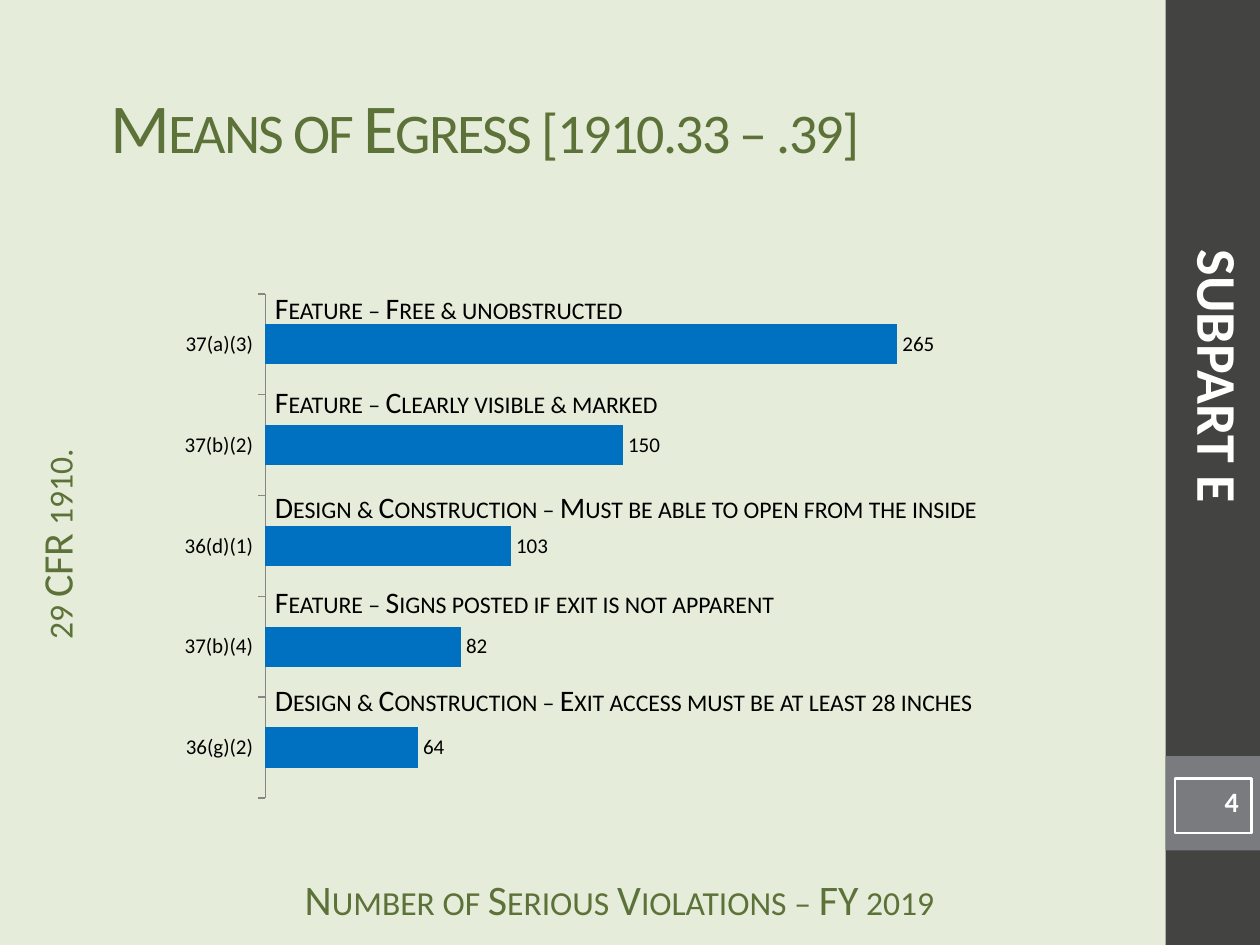
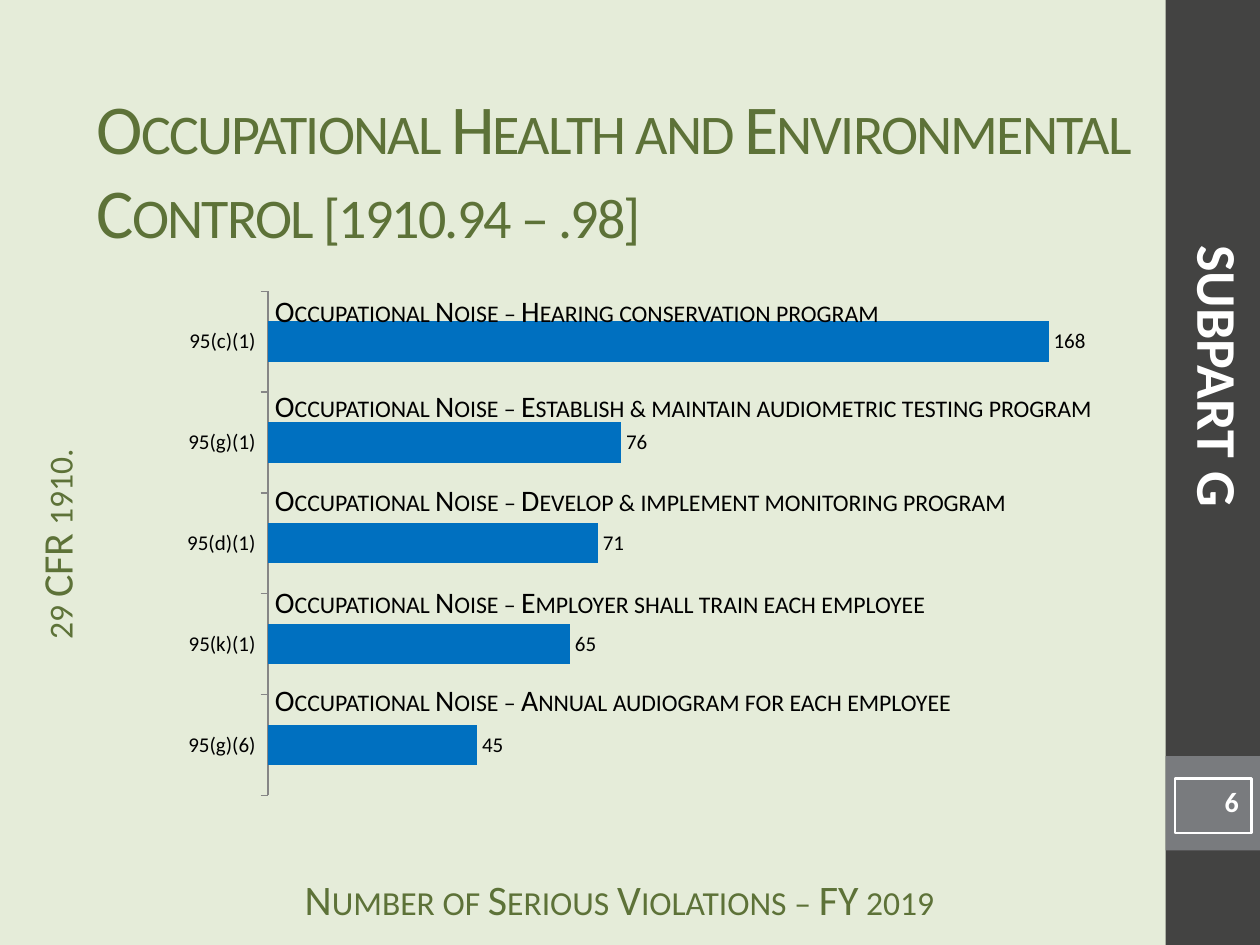
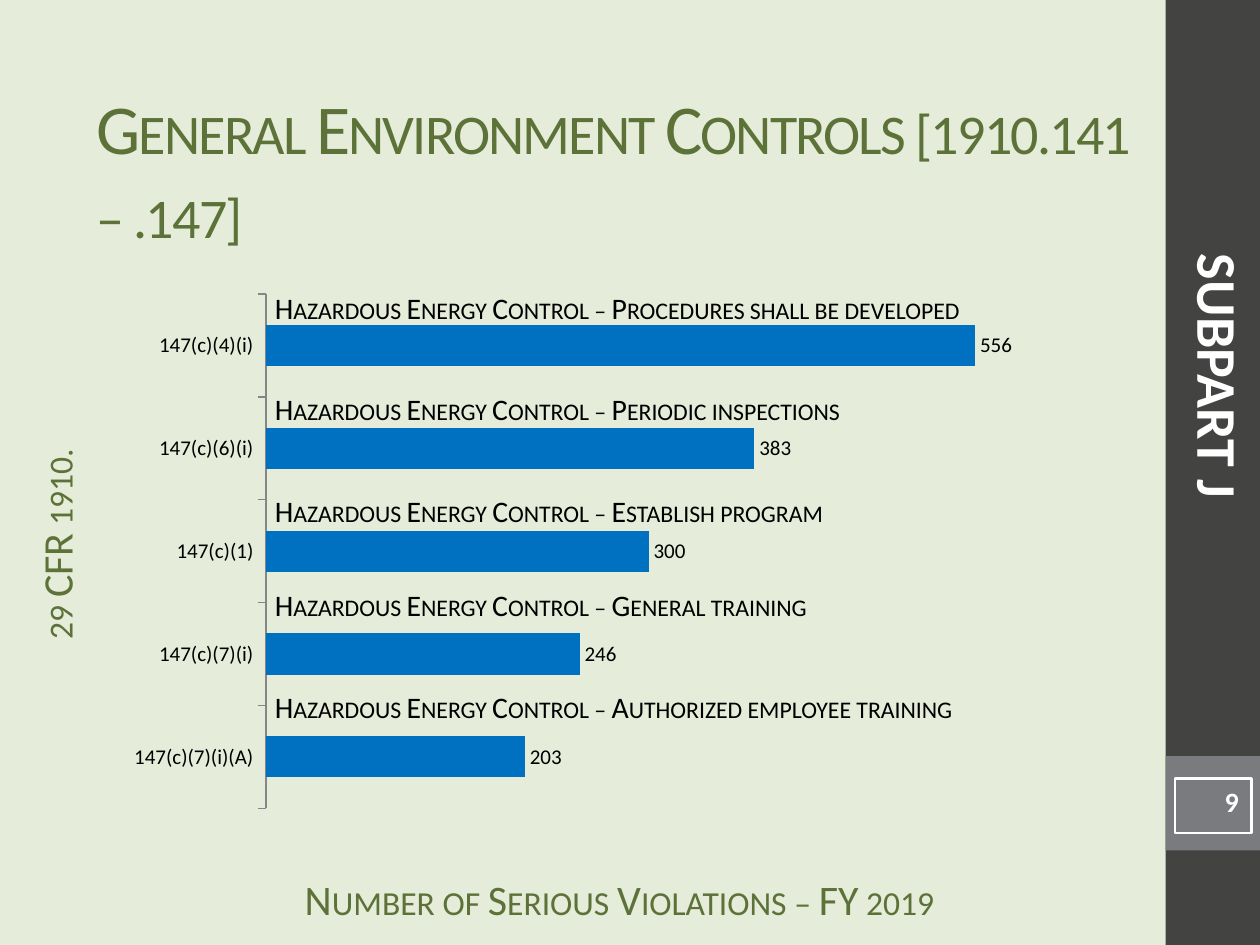
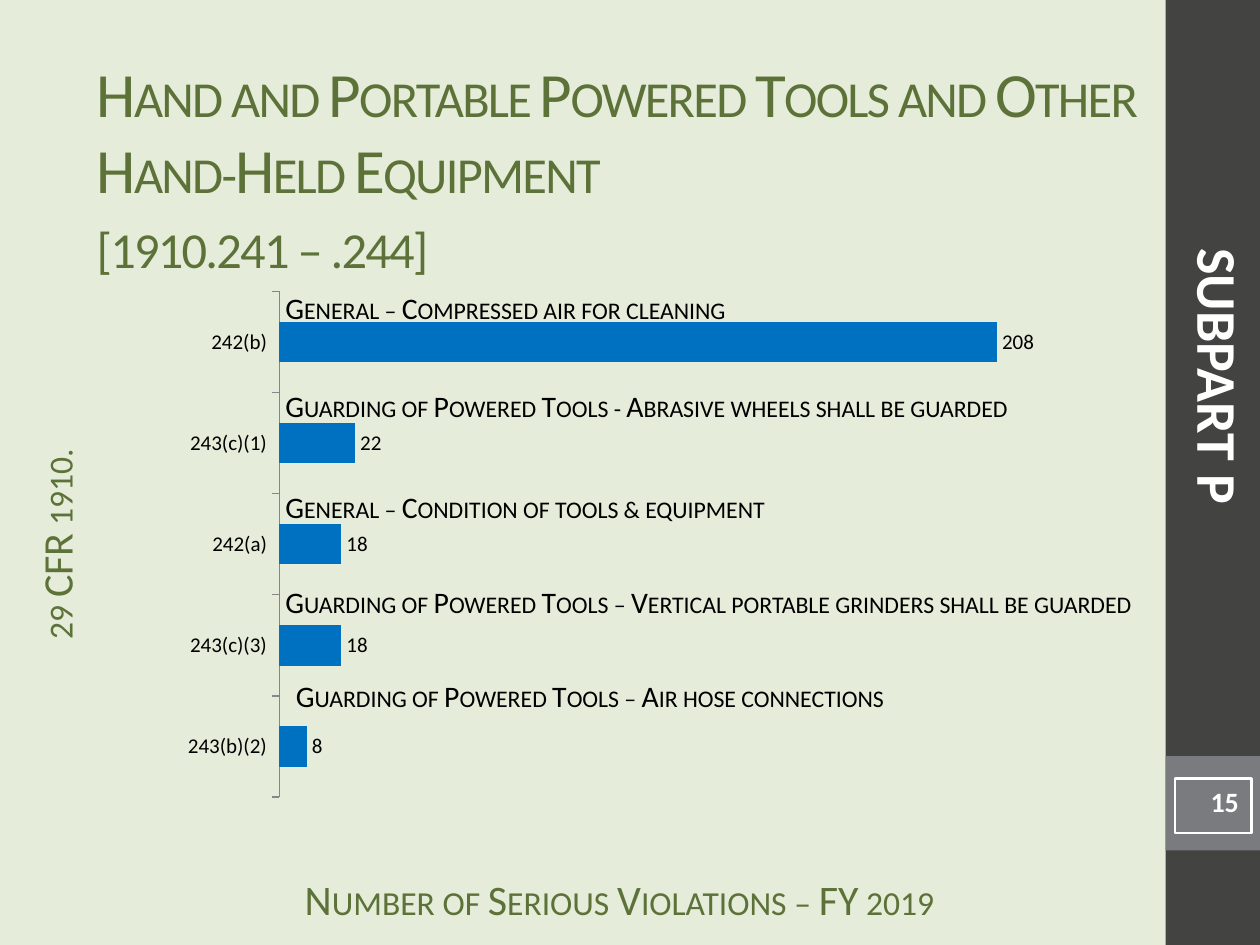
import pptx
import pptx.chart.data
import pptx.dml.color
import pptx.enum.chart
import pptx.enum.shapes
import pptx.enum.text
import pptx.oxml.ns
import pptx.util

Pt = pptx.util.Pt
RGBColor = pptx.dml.color.RGBColor
ALIGN = pptx.enum.text.PP_ALIGN
ANCHOR = pptx.enum.text.MSO_ANCHOR

# Colours
PALE_GREEN = RGBColor(0xE5, 0xEC, 0xD9)
OLIVE = RGBColor(0x5D, 0x72, 0x38)
CHARCOAL = RGBColor(0x43, 0x43, 0x42)
GREY = RGBColor(0x79, 0x7B, 0x7E)
AXIS_GREY = RGBColor(0x86, 0x86, 0x86)
BAR_BLUE = RGBColor(0x00, 0x70, 0xC0)
BLACK = RGBColor(0, 0, 0)
WHITE = RGBColor(0xFF, 0xFF, 0xFF)

# Text styles: font values, colour, alignment, and run attributes
SMALL_CAPS = {"cap": "small"}
TIGHT_CAPS = {"cap": "small", "spc": "-100"}
TITLE = ({"size": Pt(40)}, OLIVE, ALIGN.LEFT, TIGHT_CAPS)
LONG_TITLE = ({"size": Pt(36)}, OLIVE, ALIGN.LEFT, TIGHT_CAPS)
AXIS_TITLE = ({"size": Pt(24)}, OLIVE, ALIGN.CENTER, SMALL_CAPS)
BAR_LABEL = ({"size": Pt(17)}, BLACK, ALIGN.LEFT, SMALL_CAPS)
SUBPART = ({"size": Pt(32), "bold": True}, WHITE, ALIGN.CENTER, {})
NUMBER = ({"size": Pt(16), "bold": True}, WHITE, ALIGN.RIGHT, {})

# Places, in points: left, top, width, height
TITLE_BOX = (48, 42, 616.5, 108)
BAND_BOX = (666, 0, 54, 540)
NUMBER_BAND_BOX = (666, 432, 54, 54)
NUMBER_BOX = (671.5, 445, 43.5, 31)
SUBPART_BOX = (481.5, 192, 430.5, 46)
CAPTION_BOX = (150, 499, 408, 24)
REGULATION_BOX = (-112.5, 290, 302, 42)
LABEL_HEIGHT = 28

# Rows from top to bottom: paragraph, violations, label, label top, label width
SLIDES = [
    {
        "title": "Means of Egress [1910.33 – .39]",
        "title_box": (56, 18, 616.5, 108),
        "subpart": "E", "number": 4, "label_left": 150,
        "chart_box": (96, 162, 474, 300), "axis_max": 300,
        "rows": [
            ("37(a)(3)", 265, "Feature – Free & unobstructed", 162, 318),
            ("37(b)(2)", 150, "Feature – Clearly visible & marked", 216, 244),
            ("36(d)(1)", 103, "Design & Construction – Must be able to open from the inside", 276, 433),
            ("37(b)(4)", 82, "Feature – Signs posted if exit is not apparent", 330, 395),
            ("36(g)(2)", 64, "Design & Construction – Exit access must be at least 28 inches", 386, 438),
        ],
    },
    {
        "title": "Occupational Health and Environmental Control [1910.94 – .98]",
        "subpart": "G", "number": 6, "label_left": 150,
        "chart_box": (96, 160.5, 546, 300), "axis_max": 180,
        "rows": [
            ("95(c)(1)", 168, "Occupational Noise – Hearing conservation program", 164, 378),
            ("95(g)(1)", 76, "Occupational Noise – Establish & maintain audiometric testing program", 218, 498),
            ("95(d)(1)", 71, "Occupational Noise – Develop & implement monitoring program", 272, 486),
            ("95(k)(1)", 65, "Occupational Noise – Employer shall train each employee", 330, 498),
            ("95(g)(6)", 45, "Occupational Noise – Annual audiogram for each employee", 386, 498),
        ],
    },
    {
        "title": "General Environment Controls [1910.141 – .147]",
        "subpart": "J", "number": 9, "label_left": 150,
        "chart_box": (66, 162, 534, 306), "axis_max": 600,
        "rows": [
            ("147(c)(4)(i)", 556, "Hazardous Energy Control – Procedures shall be developed", 162, 420),
            ("147(c)(6)(i)", 383, "Hazardous Energy Control – Periodic inspections", 219.5, 396),
            ("147(c)(1)", 300, "Hazardous Energy Control – Establish program", 278, 337),
            ("147(c)(7)(i)", 246, "Hazardous Energy Control – General training", 332, 360),
            ("147(c)(7)(i)(A)", 203, "Hazardous Energy Control – Authorized employee training", 390, 432),
        ],
    },
    {
        "title": "Hand and Portable Powered Tools and Other Hand-Held Equipment\n[1910.241 – .244]",
        "title_style": LONG_TITLE,
        "subpart": "P", "number": 15, "label_left": 156, "last_label_left": 162,
        "chart_box": (96, 160.5, 568, 301), "axis_max": 250,
        "rows": [
            ("242(b)", 208, "General – Compressed air for cleaning", 162, 276.5),
            ("243(c)(1)", 22, "Guarding of Powered Tools - Abrasive wheels shall be guarded", 218, 443),
            ("242(a)", 18, "General – Condition of tools & equipment", 276, 330),
            ("243(c)(3)", 18, "Guarding of Powered Tools – Vertical portable grinders shall be guarded", 330, 510),
            ("243(b)(2)", 8, "Guarding of Powered Tools – Air hose connections", 384, 480),
        ],
    },
]


def place(shape, box):
    for side, length in zip(("left", "top", "width", "height"), box):
        setattr(shape, side, Pt(length))


def write(shape, text, style, **frame_values):
    """Fill a shape with one styled paragraph."""
    font_values, color, align, run_attributes = style
    frame = shape.text_frame
    for name, value in {"word_wrap": True, **frame_values}.items():
        setattr(frame, name, value)
    paragraph = frame.paragraphs[0]
    paragraph.text = text
    paragraph.alignment = align
    for run in paragraph.runs:
        for name, value in {"name": "Calibri", **font_values}.items():
            setattr(run.font, name, value)
        run.font.color.rgb = color
    for properties in shape.element.iter(pptx.oxml.ns.qn("a:rPr")):
        for name, value in run_attributes.items():
            properties.set(name, value)


def add_text(slide, box, text, style, rotation=0, **frame_values):
    textbox = slide.shapes.add_textbox(*map(Pt, box))
    textbox.rotation = rotation
    write(textbox, text, style, **frame_values)
    return textbox


def add_rectangle(slide, box, fill=None, line=None):
    rectangle = slide.shapes.add_shape(
        pptx.enum.shapes.MSO_SHAPE.RECTANGLE, *map(Pt, box))
    rectangle.shadow.inherit = False
    if fill is None:
        rectangle.fill.background()
    else:
        rectangle.fill.solid()
        rectangle.fill.fore_color.rgb = fill
    if line is None:
        rectangle.line.fill.background()
    else:
        rectangle.line.color.rgb = line
        rectangle.line.width = Pt(1.5)
    return rectangle


def furnish_layout(layout, slide):
    """Draw the bands and captions once and move them into the layout."""
    for placeholder in list(layout.placeholders)[1:]:
        layout.shapes.element.remove(placeholder.element)
    place(layout.placeholders[0], TITLE_BOX)
    insets = {"margin_top": 0, "margin_bottom": Pt(3.6)}
    shared = [
        add_rectangle(slide, BAND_BOX, CHARCOAL),
        add_rectangle(slide, NUMBER_BAND_BOX, GREY),
        add_text(slide, CAPTION_BOX, "Number of Serious Violations – FY 2019",
                 AXIS_TITLE, **insets),
        add_text(slide, REGULATION_BOX, "29 CFR 1910.", AXIS_TITLE, 270, **insets),
    ]
    for part in shared:
        layout.shapes.element.append(part.element)


def add_violations_chart(slide, box, rows, axis_max):
    data = pptx.chart.data.CategoryChartData()
    upward = rows[::-1]
    data.categories = [row[0] for row in upward]
    data.add_series("Series 1", [row[1] for row in upward])
    chart = slide.shapes.add_chart(
        pptx.enum.chart.XL_CHART_TYPE.BAR_CLUSTERED, *map(Pt, box), data).chart
    chart.has_legend = chart.has_title = False
    for name, value in {"name": "Calibri", "size": Pt(10)}.items():
        setattr(chart.font, name, value)
    chart.font.color.rgb = BLACK

    # Axes
    paragraphs, counts = chart.category_axis, chart.value_axis
    paragraphs.major_tick_mark = pptx.enum.chart.XL_TICK_MARK.OUTSIDE
    paragraphs.tick_labels.font.size = Pt(12)
    paragraphs.format.line.color.rgb = AXIS_GREY
    axis_values = {"minimum_scale": 0, "maximum_scale": axis_max,
                   "has_major_gridlines": False, "visible": False}
    for name, value in axis_values.items():
        setattr(counts, name, value)

    # Bars and their values
    plot = chart.plots[0]
    plot.vary_by_categories = False
    plot.gap_width = 150
    bars = plot.series[0].format.fill
    bars.solid()
    bars.fore_color.rgb = BAR_BLUE
    plot.has_data_labels = True
    plot.data_labels.show_value = True
    plot.data_labels.position = pptx.enum.chart.XL_LABEL_POSITION.OUTSIDE_END
    plot.data_labels.font.size = Pt(12)


def add_bar_labels(slide, content):
    lefts = [content["label_left"]] * len(content["rows"])
    lefts[-1] = content.get("last_label_left", lefts[-1])
    for left, (_, _, label, top, width) in zip(lefts, content["rows"]):
        add_text(slide, (left, top, width, LABEL_HEIGHT), label, BAR_LABEL)


def fill_slide(slide, content):
    title = slide.shapes.title
    if "title_box" in content:
        place(title, content["title_box"])
    write(title, content["title"], content.get("title_style", TITLE),
          vertical_anchor=ANCHOR.MIDDLE,
          auto_size=pptx.enum.text.MSO_AUTO_SIZE.NONE)
    add_violations_chart(slide, content["chart_box"], content["rows"],
                         content["axis_max"])
    number = add_rectangle(slide, NUMBER_BOX, line=WHITE)
    write(number, str(content["number"]), NUMBER, vertical_anchor=ANCHOR.TOP)
    add_bar_labels(slide, content)
    add_text(slide, SUBPART_BOX, f"SUBPART {content['subpart']}", SUBPART, 90)


def main():
    deck = pptx.Presentation()
    deck.slide_width, deck.slide_height = Pt(720), Pt(540)
    background = deck.slide_master.background.fill
    background.solid()
    background.fore_color.rgb = PALE_GREEN
    layout = deck.slide_layouts.get_by_name("Title Only")
    slides = [deck.slides.add_slide(layout) for _ in SLIDES]
    furnish_layout(layout, slides[0])
    for slide, content in zip(slides, SLIDES):
        fill_slide(slide, content)
    deck.save("out.pptx")


if __name__ == "__main__":
    main()
